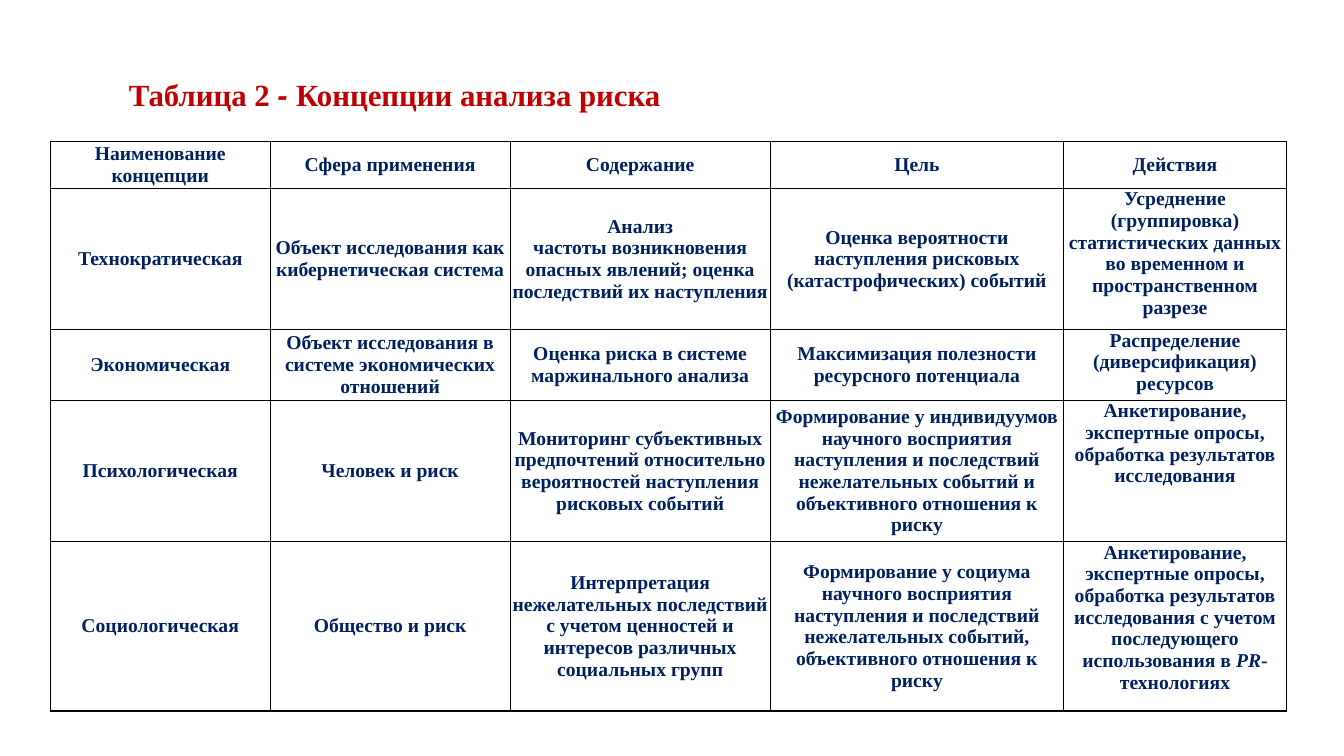
"""Build a slide with a table of risk analysis concepts."""
from lxml import etree
from pptx import Presentation
from pptx.dml.color import RGBColor
from pptx.enum.text import MSO_ANCHOR, MSO_AUTO_SIZE, PP_ALIGN
from pptx.oxml.ns import qn
from pptx.util import Inches, Pt

TITLE = "Таблица 2 |- |Концепции анализа риска"
ROWS = [
    ["Наименование концепции", "Сфера применения", "Содержание", "Цель", "Действия"],
    ["Технократическая",
     "Объект исследования как кибернетическая система",
     "Анализ\nчастоты возникновения опасных явлений; оценка последствий их наступления",
     "Оценка вероятности наступления рисковых (катастрофических) событий",
     "Усреднение (группировка) статистических данных во временном и "
     "пространственном разрезе"],
    ["Экономическая",
     "Объект исследования в системе экономических отношений",
     "Оценка риска в системе\nмаржинального анализа",
     "Максимизация полезности ресурсного потенциала",
     "Распределение (диверсификация) ресурсов"],
    ["Психологическая",
     "Человек и риск",
     "Мониторинг субъективных предпочтений относительно вероятностей "
     "наступления рисковых событий",
     "Формирование у индивидуумов научного восприятия наступления и последствий "
     "нежелательных событий и объективного отношения к риску",
     "Анкетирование, экспертные опросы, обработка результатов исследования"],
    ["Социологическая",
     "Общество и риск",
     "Интерпретация нежелательных последствий с учетом ценностей и интересов "
     "различных социальных групп",
     "Формирование у социума научного восприятия наступления и последствий "
     "нежелательных событий, объективного отношения к риску",
     "Анкетирование, экспертные опросы, обработка результатов исследования с учетом "
     "последующего использования в |PR|-технологиях"],
]
WIDTHS = [2.18, 2.38, 2.58, 2.91, 2.21]
HEIGHTS = [0.47, 1.4, 0.7, 1.4, 1.68]

RED = RGBColor(0xC0, 0x00, 0x00)
NAVY = RGBColor(0x00, 0x20, 0x60)
BLACK = RGBColor(0x00, 0x00, 0x00)
SERIF, SANS = "Times New Roman", "Arial"
CENTER, JUSTIFY = PP_ALIGN.CENTER, PP_ALIGN.JUSTIFY
TOP, MIDDLE = MSO_ANCHOR.TOP, MSO_ANCHOR.MIDDLE
FIT = MSO_AUTO_SIZE.SHAPE_TO_FIT_TEXT


def write(frame, text, size, color, align, slant=SERIF):
    for i, line in enumerate(text.split("\n")):
        par = frame.add_paragraph() if i else frame.paragraphs[0]
        par.alignment = align
        font = par.font
        font.size, font.name, font.bold = Pt(size), SERIF, True
        font.color.rgb = color
        for j, part in enumerate(line.split("|")):
            run = par.add_run()
            run.text = part
            if j % 2:
                run.font.italic = True
                run.font.name = slant


def border(cell):
    props = cell._tc.get_or_add_tcPr()
    for i, side in enumerate("LRTB"):
        line = etree.Element(qn(f"a:ln{side}"), w=str(Pt(1)))
        fill = etree.SubElement(line, qn("a:solidFill"))
        etree.SubElement(fill, qn("a:srgbClr"), val=str(BLACK))
        props.insert(i, line)


def add_title(slide):
    box = slide.shapes.add_textbox(Inches(1.18), Inches(0.52), Inches(11.79), Inches(0.59))
    frame = box.text_frame
    frame.word_wrap = True
    frame.auto_size = FIT
    write(frame, TITLE, 22, RED, JUSTIFY, SANS)
    frame.paragraphs[0].line_spacing = 1.5


def add_grid(slide):
    table = slide.shapes.add_table(
        len(ROWS), len(WIDTHS), Inches(0.5), Inches(1.4),
        Inches(sum(WIDTHS)), Inches(sum(HEIGHTS))).table
    table.first_row = table.horz_banding = False
    for col, width in zip(table.columns, WIDTHS):
        col.width = Inches(width)
    for r, (row, height) in enumerate(zip(ROWS, HEIGHTS)):
        table.rows[r].height = Inches(height)
        for c, text in enumerate(row):
            cell = table.cell(r, c)
            cell.margin_left = cell.margin_right = Inches(0.02)
            cell.margin_top = cell.margin_bottom = 0
            last = c == len(row) - 1
            cell.vertical_anchor = TOP if r and last else MIDDLE
            cell.fill.background()
            border(cell)
            write(cell.text_frame, text, 14, NAVY, CENTER)


def main():
    deck = Presentation()
    deck.slide_width, deck.slide_height = Inches(13.33), Inches(7.5)
    slide = deck.slides.add_slide(deck.slide_layouts[6])
    add_title(slide)
    add_grid(slide)
    deck.save("out.pptx")


if __name__ == "__main__":
    main()
